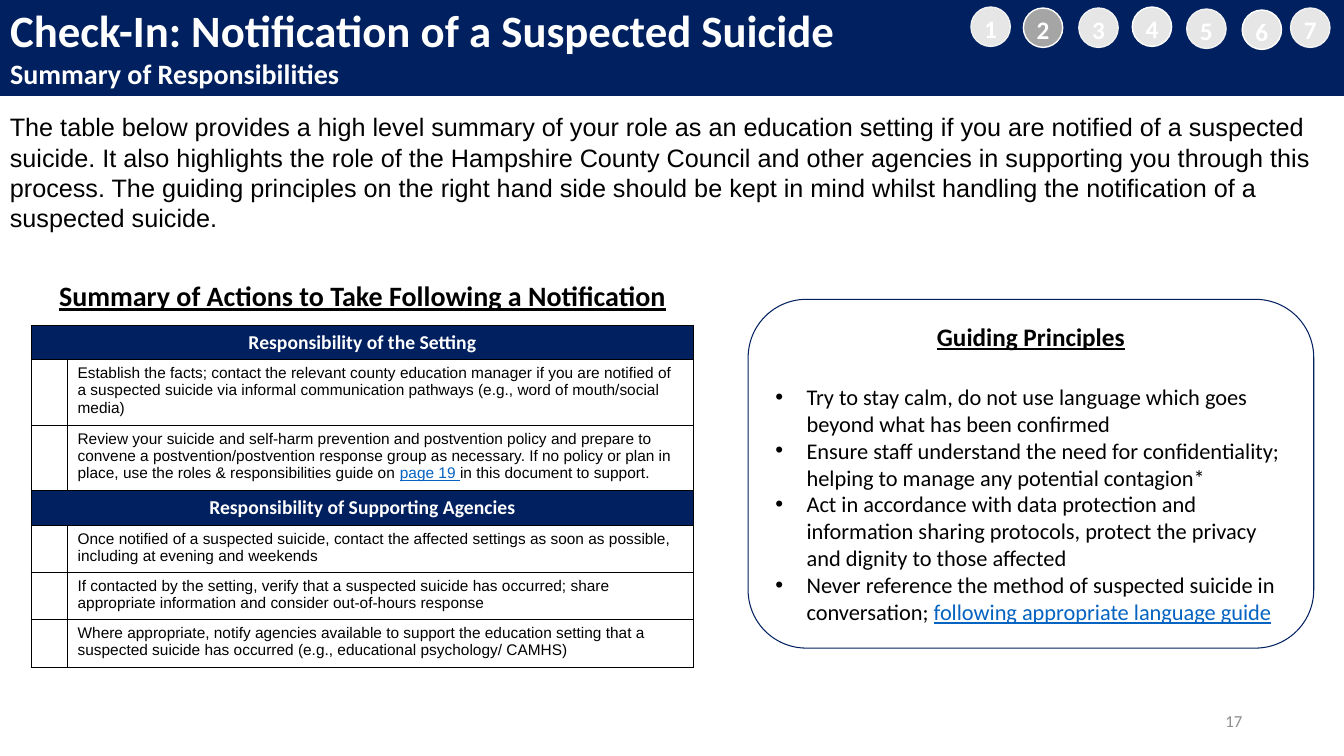
from pptx import Presentation
from pptx.dml.color import RGBColor
from pptx.enum.shapes import MSO_SHAPE
from pptx.enum.text import MSO_ANCHOR, MSO_AUTO_SIZE, PP_ALIGN
from pptx.oxml import parse_xml
from pptx.oxml.ns import nsdecls
from pptx.util import Emu, Pt

PX = 9144
COLORS = {
    "navy": "002060", "white": "FFFFFF", "black": "000000", "link": "0563C1",
    "step": "E7E6E6", "current": "A5A5A5", "outline": "F2F2F2", "number": "8C8C8C",
}
INTRO = (
    "The table below provides a high level summary of your role as an education setting "
    "if you are notified of a suspected suicide. It also highlights the role of the "
    "Hampshire County Council and other agencies in supporting you through this process. "
    "The guiding principles on the right hand side should be kept in mind whilst handling "
    "the notification of a suspected suicide."
)
ACTIONS = [
    ("title", 50, ["Summary of Actions to Take Following a Notification"]),
    ("header", 34, ["Responsibility of the Setting"]),
    ("action", 65, [
        "Establish the facts; contact the relevant county education manager if you are "
        "notified of a suspected suicide via informal communication pathways (e.g., word "
        "of mouth/social media)"]),
    ("action", 65, [
        "Review your suicide and self-harm prevention and postvention policy and prepare to "
        "convene a postvention/postvention response group as necessary. If no policy or plan "
        "in place, use the roles & responsibilities guide on ",
        "page 19 ", "in this document to support."]),
    ("header", 34, ["Responsibility of Supporting Agencies"]),
    ("action", 47, [
        "Once notified of a suspected suicide, contact the affected settings as soon as "
        "possible, including at evening and weekends"]),
    ("action", 47, [
        "If contacted by the setting, verify that a suspected suicide has occurred; share "
        "appropriate information and consider out-of-hours response"]),
    ("action", 47, [
        "Where appropriate, notify agencies available to support the education setting that "
        "a suspected suicide has occurred (e.g., educational psychology/ CAMHS)"]),
]
PRINCIPLES = [
    ["Try to stay calm, do not use language which goes beyond what has been confirmed"],
    ["Ensure staff understand the need for confidentiality; helping to manage any "
     "potential contagion*"],
    ["Act in accordance with data protection and information sharing protocols, protect "
     "the privacy and dignity to those affected"],
    ["Never reference the method of suspected suicide in conversation; ",
     "following appropriate language guide"],
]
LINKS = {"page 19 ", "following appropriate language guide"}


def rgb(name):
    return RGBColor.from_string(COLORS[name])


def px(*lengths):
    return [Emu(n * PX) for n in lengths]


def paint(shape, fill, line, width):
    if fill:
        shape.fill.solid()
        shape.fill.fore_color.rgb = rgb(fill)
    else:
        shape.fill.background()
    shape.line.color.rgb = rgb(line)
    shape.line.width = Pt(width)


def write(p, texts, size, font="Calibri", color="black", bold=False,
          underline=False, align=PP_ALIGN.LEFT):
    p.alignment = align
    p.font.size, p.font.name, p.font.bold = Pt(size), font, bold
    p.font.underline = underline
    p.font.color.rgb = rgb(color)
    for text in texts:
        r = p.add_run()
        r.text = text
        if text in LINKS:
            r.font.color.rgb = rgb("link")
            r.font.underline = True


def place(shape, box):
    shape.left, shape.top, shape.width, shape.height = px(*box)
    tf = shape.text_frame
    tf.auto_size = MSO_AUTO_SIZE.NONE
    tf.word_wrap = True
    return tf


def add_banner(s, box):
    title = s.shapes.title
    tf = place(title, box)
    paint(title, "navy", "navy", 0.75)
    tf.vertical_anchor = MSO_ANCHOR.MIDDLE
    write(tf.paragraphs[0], ["Check-In: Notification of a Suspected Suicide"], 32,
          color="white", bold=True)
    write(tf.add_paragraph(), ["Summary of Responsibilities"], 20, color="white", bold=True)


def add_steps(s, box, current):
    left, top, size = box
    offsets = [(0, 0), (52, 1), (107, 1), (160, 0), (214, 2), (269, 3), (317, 1)]
    for number, (dx, dy) in enumerate(offsets, 1):
        sp = s.shapes.add_shape(MSO_SHAPE.FLOWCHART_CONNECTOR,
                                *px(left + dx, top + dy, size, size))
        sp.shadow.inherit = False
        paint(sp, "current" if number == current else "step",
              "white" if number in (2, 4, 6) else "outline", 1)
        tf = sp.text_frame
        tf.word_wrap = False
        tf.margin_left = tf.margin_right = tf.margin_bottom = 0
        tf.margin_top = Emu(4 * PX)
        tf.vertical_anchor = MSO_ANCHOR.MIDDLE
        write(tf.paragraphs[0], [str(number)], 18, color="white", bold=True,
              align=PP_ALIGN.CENTER)


def add_text(s, box, text, anchor=MSO_ANCHOR.TOP, **style):
    tf = place(s.shapes.add_textbox(0, 0, 0, 0), box)
    tf.vertical_anchor = anchor
    write(tf.paragraphs[0], [text], **style)


def border(cell, sides):
    tcPr = cell._tc.get_or_add_tcPr()
    for i, side in enumerate(sides):
        tcPr.insert(i, parse_xml(
            f'<a:ln{side} {nsdecls("a")} w="12700"><a:solidFill>'
            f'<a:srgbClr val="{COLORS["black"]}"/></a:solidFill></a:ln{side}>'))


def add_actions(s, box):
    styles = {
        "title": dict(size=20, bold=True, underline=True, align=PP_ALIGN.CENTER),
        "header": dict(size=14, color="white", bold=True, align=PP_ALIGN.CENTER),
        "action": dict(size=11, font="Arial"),
    }
    table = s.shapes.add_table(len(ACTIONS), 2, *px(*box)).table
    table.first_row = table.horz_banding = False
    check_width = 36
    table.columns[0].width, table.columns[1].width = px(check_width, box[2] - check_width)
    for row, (kind, height, texts) in enumerate(ACTIONS):
        table.rows[row].height = Emu(height * PX)
        for col in range(2):
            cell = table.cell(row, col)
            cell.fill.solid()
            cell.fill.fore_color.rgb = rgb("navy" if kind == "header" else "white")
            border(cell, "B" if kind == "title" else "LRTB")
        text_col = 1 if kind == "action" else 0
        if text_col == 0:
            table.cell(row, 0).merge(table.cell(row, 1))
        write(table.cell(row, text_col).text_frame.paragraphs[0], texts, **styles[kind])


def add_principles(s, box):
    left, top, width, height = box
    frame = s.shapes.add_shape(MSO_SHAPE.ROUNDED_RECTANGLE, *px(*box))
    frame.shadow.inherit = False
    paint(frame, None, "navy", 0.75)
    frame.text_frame.vertical_anchor = MSO_ANCHOR.TOP
    write(frame.text_frame.paragraphs[0], ["Guiding Principles"], 18, bold=True,
          underline=True, align=PP_ALIGN.CENTER)

    inset, list_top = 17, 78
    tf = place(s.placeholders[1],
               (left + inset, top + list_top, width - 2 * inset, height - list_top - inset))
    for i, texts in enumerate(PRINCIPLES):
        p = tf.paragraphs[0] if i == 0 else tf.add_paragraph()
        write(p, texts, 16)
        p.space_before = Pt(0)
        pPr = p._p.get_or_add_pPr()
        pPr.set("marL", str(31 * PX))
        pPr.set("indent", str(-31 * PX))


def main():
    prs = Presentation()
    prs.slide_width, prs.slide_height = px(1333, 750)
    s = prs.slides.add_slide(prs.slide_layouts[1])
    add_banner(s, (0, -3, 1333, 98))
    add_actions(s, (31, 273, 657, 389))
    add_principles(s, (742, 297, 561, 346))
    add_steps(s, (963, 7, 39), current=2)
    add_text(s, (0, 106, 1333, 131), INTRO, size=18, font="Arial")
    add_text(s, (942, 695, 300, 40), "17", MSO_ANCHOR.MIDDLE, size=12,
             color="number", align=PP_ALIGN.RIGHT)
    prs.save("out.pptx")


if __name__ == "__main__":
    main()
